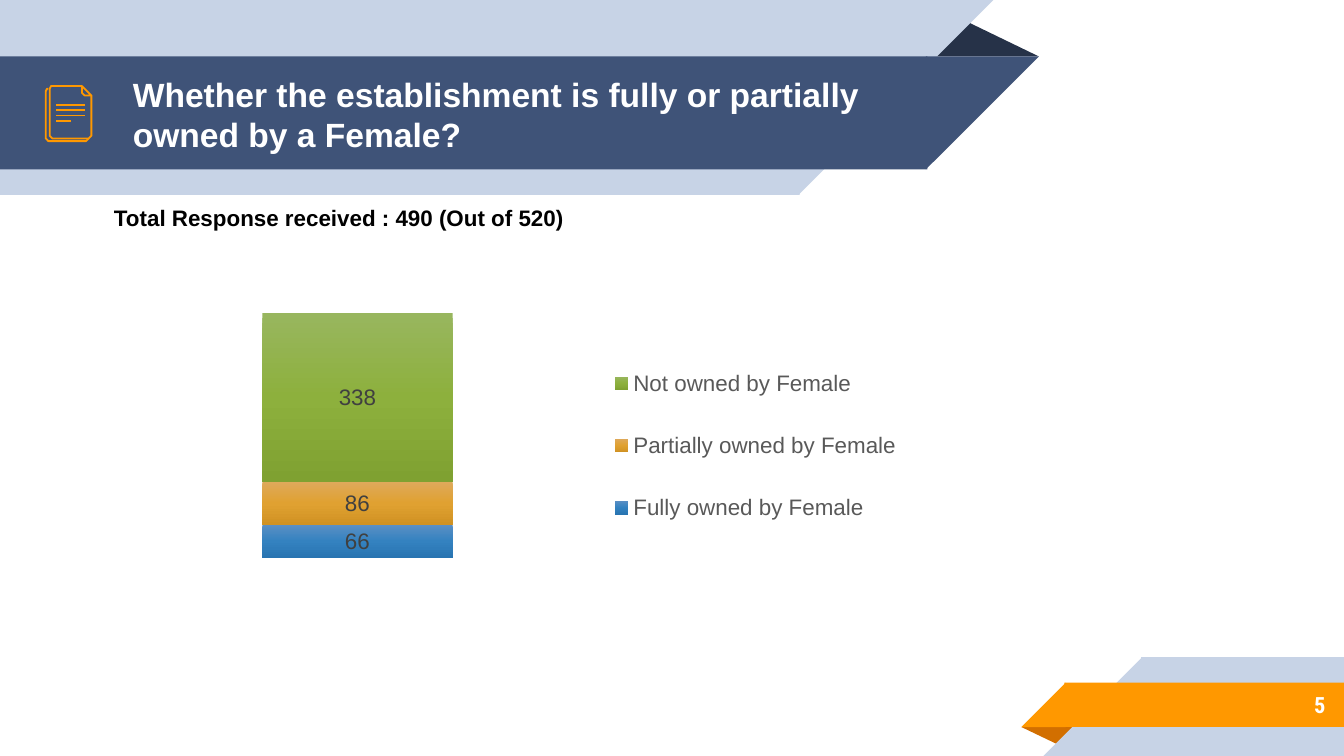
import pptx
import pptx.util
import pptx.chart.data
import pptx.dml.color
import pptx.enum.chart
import pptx.enum.shapes
import pptx.enum.text
import pptx.oxml
import pptx.oxml.ns
from dataclasses import dataclass

Inches = pptx.util.Inches
Kind = pptx.enum.shapes.MSO_SHAPE


@dataclass(frozen=True)
class Theme:
    pale: str = "C7D3E6"
    navy: str = "3F5378"
    dark: str = "263248"
    gold: str = "FF9800"
    rust: str = "D26F00"
    white: str = "FFFFFF"
    black: str = "000000"
    label: str = "404040"
    key: str = "595959"
    sans: str = "Arial"
    slim: str = "Roboto Condensed"
    head: int = 18
    body: int = 12
    thin: float = 0.96


THEME = Theme()
SERIES = [
    ("Fully owned by Female ", 66, ("5A8FC4", "3482C0", "2874B1")),
    ("Partially owned by Female ", 86, ("DEA95B", "E0A131", "D09223")),
    ("Not owned by Female  ", 338, ("98B65E", "8DB03D", "7FA131")),
]


def rgb(tone):
    return pptx.dml.color.RGBColor.from_string(tone)


def style(font, tone, **values):
    base = {"name": THEME.sans, "size": pptx.util.Pt(THEME.body), "bold": False}
    for key, value in {**base, **values}.items():
        setattr(font, key, value)
    font.color.rgb = rgb(tone)


def shape(slide, kind, box, tone, turn=0, flip=False):
    item = slide.shapes.add_shape(kind, *map(Inches, box))
    item.shadow.inherit = False
    item.fill.solid()
    item.fill.fore_color.rgb = rgb(tone)
    item.line.fill.background()
    item.rotation = turn
    if flip:
        item.element.spPr.get_or_add_xfrm().set("flipH", "1")
    return item


def band(slide, box, tone, right=False):
    """A strip with a 45 degree end, slanted on the left or the right."""
    x, y, w, h = box
    lap = 0.01  # hides the seam
    body = x if right else x + h - lap
    tip = x + w - h if right else x
    shape(slide, Kind.RECTANGLE, (body, y, w - h + lap, h), tone)
    shape(slide, Kind.RIGHT_TRIANGLE, (tip, y, h, h), tone, 180 if right else 0, True)


def fold(slide, box, tone, turn=0):
    item = shape(slide, Kind.ISOSCELES_TRIANGLE, box, tone, turn)
    item.adjustments[0] = 0.32


def text(slide, box, words, tone, pad=0.1, align="LEFT", **values):
    item = slide.shapes.add_textbox(*map(Inches, box))
    frame = item.text_frame
    setup = {
        "word_wrap": True,
        "vertical_anchor": pptx.enum.text.MSO_ANCHOR.MIDDLE,
        "margin_top": Inches(pad),
        "margin_bottom": Inches(pad),
    }
    for key, value in setup.items():
        setattr(frame, key, value)
    line = frame.paragraphs[0]
    line.alignment = getattr(pptx.enum.text.PP_ALIGN, align)
    run = line.add_run()
    run.text = words
    style(run.font, tone, bold=True, **values)


def icon(slide, box):
    x, y, w, h = box

    def stroke(line):
        line.color.rgb = rgb(THEME.gold)
        line.width = pptx.util.Pt(THEME.thin)

    def trace(points, close=False):
        spots = [(Inches(x + a), Inches(y + b)) for a, b in points]
        pen = slide.shapes.build_freeform(*spots[0])
        pen.add_line_segments(spots[1:], close=close)
        item = pen.convert_to_shape()
        item.shadow.inherit = False
        item.fill.background()
        stroke(item.line)

    cut, ear, gap = 0.02, 0.07, 0.03
    # Back sheet, front sheet, folded corner
    trace([(w - cut, h - cut), (w - gap, h - cut / 2), (w - 2 * cut, h),
           (cut, h), (0, h - cut), (0, 2 * cut), (cut / 2, cut), (cut, cut)])
    trace([(w, ear), (w, h - 2 * cut), (w - cut, h - cut), (gap + cut, h - cut),
           (gap, h - 2 * cut), (gap, cut), (gap + cut / 2, 0), (w - ear, 0)])
    trace([(w - ear, 0), (w, ear), (w - ear + cut, ear), (w - ear, ear - cut)], True)
    # Lines of writing
    for row, span in enumerate((0.21, 0.21, 0.21, 0.11)):
        level = Inches(y + 0.14 + row * 0.04)
        rule = slide.shapes.add_connector(
            pptx.enum.shapes.MSO_CONNECTOR.STRAIGHT,
            Inches(x + 0.08 + span), level, Inches(x + 0.08), level)
        rule.element.spPr.append(pptx.oxml.parse_xml(
            f"<a:effectLst {pptx.oxml.ns.nsdecls('a')}/>"))
        stroke(rule.line)


def header(slide, box):
    x, y, w, h = box
    fold(slide, (x + w - 0.85, y + 0.14, 0.85, 0.28), THEME.dark)
    band(slide, (x, y, w - 0.34, h), THEME.pale, True)
    band(slide, (x, y + 0.42, w, 0.84), THEME.navy, True)
    text(slide, (x + 0.89, y + 0.43, 5.75, 0.84),
         "Whether the establishment is fully or partially owned by a Female?",
         THEME.white, size=pptx.util.Pt(THEME.head))
    icon(slide, (x + 0.34, y + 0.64, 0.34, 0.41))


def footer(slide, box):
    x, y, w, h = box
    fold(slide, (x, y + 0.52, 0.43, 0.14), THEME.rust, 180)
    band(slide, (x + 0.16, y, w - 0.16, h), THEME.pale)
    band(slide, (x, y + 0.19, w, 0.33), THEME.gold)
    text(slide, (x + 0.73, y + 0.18, 1.63, 0.35), "5", THEME.white,
         align="RIGHT", name=THEME.slim)


def layout(x, y, w, h, inner=False):
    target = '<c:layoutTarget val="inner"/>' if inner else ""
    modes = "".join(f'<c:{k}Mode val="edge"/>' for k in "xy")
    sizes = "".join(f'<c:{k} val="{v}"/>' for k, v in zip("xywh", (x, y, w, h)))
    return pptx.oxml.parse_xml(
        f"<c:layout {pptx.oxml.ns.nsdecls('c')}><c:manualLayout>"
        f"{target}{modes}{sizes}</c:manualLayout></c:layout>")


def shade(series, tones):
    stops = "".join(f'<a:gs pos="{n * 50000}"><a:srgbClr val="{tone}"/></a:gs>'
                    for n, tone in enumerate(tones))
    props = series._element.get_or_add_spPr()
    props.insert(0, pptx.oxml.parse_xml(
        f"<a:gradFill {pptx.oxml.ns.nsdecls('a')}><a:gsLst>{stops}</a:gsLst>"
        '<a:lin ang="5400000" scaled="0"/></a:gradFill>'))


def graph(slide, box):
    enum = pptx.enum.chart
    data = pptx.chart.data.CategoryChartData()
    data.categories = ["1"]
    for name, value, _ in SERIES:
        data.add_series(name, [value])
    chart = slide.shapes.add_chart(
        enum.XL_CHART_TYPE.COLUMN_STACKED, *map(Inches, box), data).chart
    style(chart.font, THEME.black)
    chart.has_title = False
    # Axes and bars
    chart.value_axis.has_major_gridlines = False
    chart.value_axis.minimum_scale = 0
    chart.value_axis.maximum_scale = 600
    for axis in (chart.category_axis, chart.value_axis):
        axis.visible = False
    plot = chart.plots[0]
    for key, value in {"gap_width": 150, "overlap": 100,
                       "vary_by_categories": False}.items():
        setattr(plot, key, value)
    for series, (_, _, tones) in zip(plot.series, SERIES):
        shade(series, tones)
        series.data_labels.show_value = True
        style(series.data_labels.font, THEME.label)
    # Legend and placing
    chart.has_legend = True
    legend = chart.legend
    legend.position = enum.XL_LEGEND_POSITION.CORNER
    legend.include_in_layout = False
    style(legend.font, THEME.key)
    tag = pptx.oxml.ns.qn
    area, key = plot._element.getparent(), legend._element
    for part in (area, key):
        for old in part.findall(tag("c:layout")):
            part.remove(old)
    area.insert(0, layout(0, 0.04, 0.51, 0.68, True))
    key.find(tag("c:legendPos")).addnext(layout(0.52, 0.21, 0.33, 0.51))


def main():
    deck = pptx.Presentation()
    wide = Inches(10)
    deck.slide_width, deck.slide_height = wide, wide * 9 // 16
    slide = deck.slides.add_slide(deck.slide_layouts[6])
    header(slide, (0, 0, 7.73, 1.45))
    footer(slide, (7.6, 4.89, 2.4, 0.74))
    graph(slide, (0.89, 1.79, 6.94, 3.28))
    text(slide, (0.75, 1.47, 4.03, 0.3),
         "Total Response received : 490 (Out of 520)", THEME.black, pad=0.05)
    deck.save("out.pptx")


if __name__ == "__main__":
    main()
